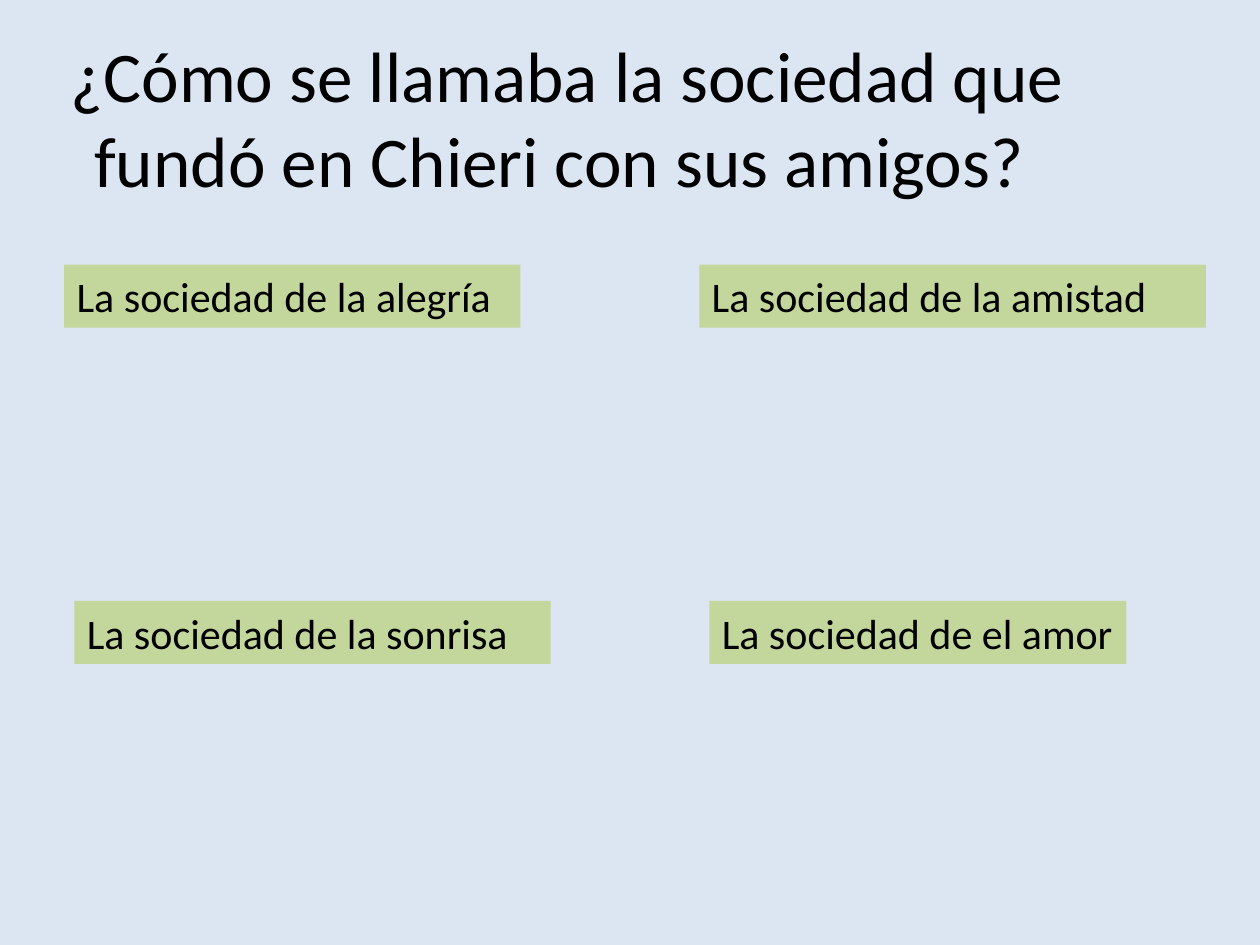
from dataclasses import dataclass

from pptx import Presentation
from pptx.dml.color import RGBColor
from pptx.enum.shapes import MSO_SHAPE
from pptx.enum.text import MSO_ANCHOR, MSO_AUTO_SIZE, PP_ALIGN
from pptx.slide import Slide
from pptx.text.text import TextFrame
from pptx.util import Inches, Pt

RECTANGLE = MSO_SHAPE.RECTANGLE
MIDDLE, TOP = MSO_ANCHOR.MIDDLE, MSO_ANCHOR.TOP
CENTER, LEFT = PP_ALIGN.CENTER, PP_ALIGN.LEFT
FIT_SHAPE = MSO_AUTO_SIZE.SHAPE_TO_FIT_TEXT

PALE_BLUE = RGBColor(0xDC, 0xE6, 0xF2)
GREEN = RGBColor(0xC3, 0xD6, 0x9B)
BLACK = RGBColor(0, 0, 0)
FONT = "Calibri"

QUESTION = "¿Cómo se llamaba la sociedad que fundó en Chieri con sus amigos? "
TOP_ROW, BOTTOM_ROW = 2.1, 4.77
ANSWER_HEIGHT = 0.5


@dataclass
class Answer:
    text: str
    left: float
    top: float
    width: float


ANSWERS = [
    Answer("La sociedad de la amistad", 5.55, TOP_ROW, 4.02),
    Answer("La sociedad de el amor", 5.63, BOTTOM_ROW, 3.31),
    Answer("La sociedad de la sonrisa", 0.59, BOTTOM_ROW, 3.78),
    Answer("La sociedad de la alegría", 0.51, TOP_ROW, 3.62),
]


def write(frame: TextFrame, text: str, size: float,
          align: PP_ALIGN, anchor: MSO_ANCHOR) -> None:
    frame.word_wrap = True
    frame.vertical_anchor = anchor
    frame.text = text
    para = frame.paragraphs[0]
    para.alignment = align
    font = para.runs[0].font
    font.name = FONT
    font.size = Pt(size)
    font.color.rgb = BLACK


def add_question(page: Slide) -> None:
    box = page.shapes.add_textbox(Inches(0), Inches(0.3), Inches(9), Inches(1.25))
    write(box.text_frame, QUESTION, 40.7, CENTER, MIDDLE)


def add_answer(page: Slide, answer: Answer) -> None:
    box = page.shapes.add_shape(
        RECTANGLE, Inches(answer.left), Inches(answer.top),
        Inches(answer.width), Inches(ANSWER_HEIGHT))
    box.shadow.inherit = False
    box.fill.solid()
    box.fill.fore_color.rgb = GREEN
    box.line.fill.background()
    write(box.text_frame, answer.text, 24, LEFT, TOP)
    box.text_frame.auto_size = FIT_SHAPE


def main() -> None:
    deck = Presentation()
    deck.slide_width, deck.slide_height = Inches(10), Inches(7.5)
    page = deck.slides.add_slide(deck.slide_layouts[6])
    page.background.fill.solid()
    page.background.fill.fore_color.rgb = PALE_BLUE
    add_question(page)
    for answer in ANSWERS:
        add_answer(page, answer)
    deck.save("out.pptx")


if __name__ == "__main__":
    main()
